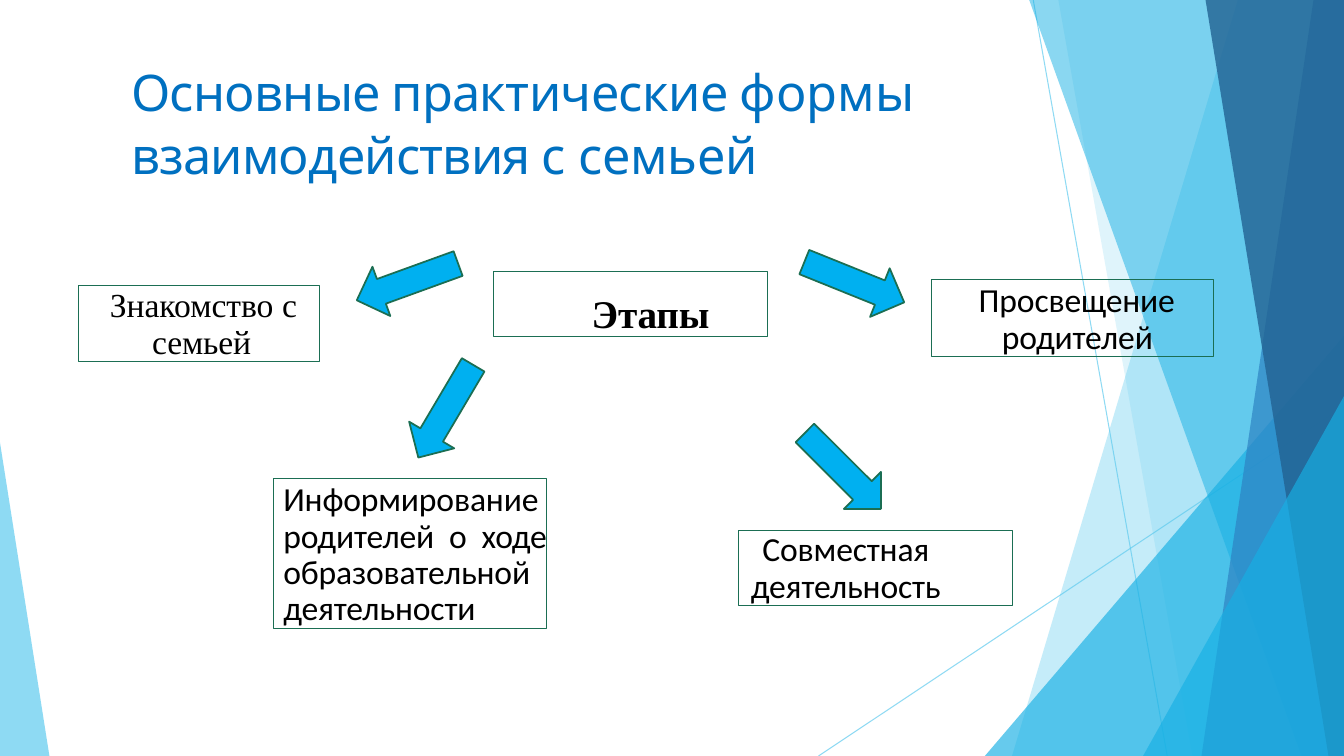
"""Build a slide on the practical forms of work with families."""
from dataclasses import dataclass
from math import hypot
from typing import Any, NamedTuple

from lxml.etree import SubElement
from pptx import Presentation
from pptx.dml.color import RGBColor
from pptx.enum.shapes import MSO_CONNECTOR, MSO_SHAPE
from pptx.enum.text import MSO_ANCHOR, MSO_AUTO_SIZE, PP_ALIGN
from pptx.oxml.ns import qn
from pptx.util import Inches, Pt

WIDE, HIGH = Inches(13.333), Inches(7.5)


@dataclass(frozen=True)
class Theme:
    """Colours, fonts and sizes of the slide."""
    sky: str = "5FCBEF"
    cyan: str = "17B0E4"
    blue: str = "2E83C3"
    navy: str = "226292"
    edge: str = "1B6E53"
    arrow: str = "00B0F0"
    head: str = "0070C0"
    ink: str = "000000"
    sans: str = "Calibri"
    serif: str = "Times New Roman"
    title: str = "Karla"
    body: float = 24
    core: float = 28
    large: float = 36
    thin: float = 0.75
    bold: float = 1.25


THEME = Theme()


class Point(NamedTuple):
    """A place in percent of the slide's width and height."""
    x: float
    y: float


class Area(NamedTuple):
    """A frame in percent of the slide's width and height."""
    x: float
    y: float
    w: float
    h: float


class Ray(NamedTuple):
    """A thin line across the slide."""
    start: Point
    end: Point


class Facet(NamedTuple):
    """A band from the top to the base, reaching the right edge."""
    top: float
    base: float
    hue: str
    alpha: int


class Wedge(NamedTuple):
    """A right triangle standing on the base."""
    area: Area
    apex: float
    hue: str
    alpha: int


class Arrow(NamedTuple):
    """A block arrow."""
    tail: Point
    tip: Point


@dataclass(frozen=True)
class Label:
    """A block of text: spans pair wording with letter spacing."""
    area: Area
    spans: tuple[tuple[str, float], ...]
    inset: float
    before: float
    left: float = 0.1
    first: float = 0
    right: float = 0
    line: Any = Pt(25.9)
    align: PP_ALIGN = PP_ALIGN.LEFT
    font: str = THEME.sans
    size: float = THEME.body
    hue: str = THEME.ink
    bold: bool = False


RAYS = (Ray(Point(76.88, 0), Point(86.85, 100)),
        Ray(Point(100, 53.73), Point(60.9, 100)))
DECOR = (
    Facet(92.1, 75.3, THEME.sky, 36),
    Facet(78.75, 88.73, THEME.sky, 20),
    Wedge(Area(73.28, 44.4, 26.72, 55.6), 1, THEME.cyan, 66),
    Facet(76.58, 96.83, THEME.cyan, 50),
    Facet(97.73, 89.4, THEME.blue, 70),
    Facet(89.7, 98.85, THEME.navy, 80),
    Wedge(Area(85.05, 52.4, 14.95, 47.6), 1, THEME.cyan, 66),
    Wedge(Area(0, 58.53, 3.68, 41.47), 0, THEME.sky, 70),
)
ARROWS = (
    Arrow(Point(34.09, 34.87), Point(26.55, 39.73)),
    Arrow(Point(35.21, 48.27), Point(31.13, 60.53)),
    Arrow(Point(59.85, 34.67), Point(67.28, 40)),
    Arrow(Point(59.89, 57.27), Point(65.55, 67.33)),
)
TITLE = Label(
    Area(9.68, 6, 60.15, 18.53),
    (("Основные практические ", -0.5), ("формы ", -0.1),
     ("взаимодействия ", -0.6), ("с ", 0), ("семьей", -0.1)),
    0.13, 9.2, left=0.01, line=Pt(44.9), font=THEME.title,
    size=THEME.large, hue=THEME.head)
LABELS = (
    Label(Area(36.75, 35.87, 20.33, 8.67), (("Этапы", -0.1),), 0.18, 12.8,
          left=0.97, line=None, font=THEME.serif, size=THEME.core, bold=True),
    Label(Area(5.85, 37.73, 17.93, 10.13),
          (("Знакомство ", 0), ("с ", -0.5), ("семьей", -0.1)), 0.03, 2.5,
          left=0.73, first=-0.42, font=THEME.serif),
    Label(Area(20.33, 63.33, 20.33, 19.87),
          (("Информирование родителей ", -0.1), ("о ", 0), ("ходе ", -0.2),
           ("образовательной деятельности", -0.1)), 0.04, 2.6,
          line=0.9, align=PP_ALIGN.JUSTIFY),
    Label(Area(69.3, 36.93, 21, 10.27), (("Просвещение родителей", -0.1),),
          0.04, 3, left=0.7, first=-0.23),
    Label(Area(54.98, 70.13, 20.33, 10), (("Совместная деятельность", -0.1),),
          0.02, 0.1, right=0.69, align=PP_ALIGN.CENTER),
)


def apply(item: Any, form: dict[str, Any]) -> None:
    """Set each format value on the item."""
    for name, value in form.items():
        setattr(item, name, value)


def spot(x: float, y: float) -> tuple[int, int]:
    """Turn shares of the slide into lengths."""
    return round(x * WIDE / 100), round(y * HIGH / 100)


def frame(area: Area) -> tuple[int, ...]:
    """Turn an area into left, top, width and height."""
    return spot(area.x, area.y) + spot(area.w, area.h)


def fade(owner: Any, alpha: int) -> None:
    """Make the colours of a shape partly clear."""
    for node in owner._element.spPr.iter(qn("a:srgbClr")):
        SubElement(node, qn("a:alpha")).set("val", str(alpha * 1000))


def paint(shape: Any, hue: str) -> None:
    """Give a shape a plain fill without shadow."""
    shape.shadow.inherit = False
    shape.fill.solid()
    shape.fill.fore_color.rgb = RGBColor.from_string(hue)


def trim(line: Any, hue: str, width: float) -> None:
    """Set the colour and width of a line."""
    line.color.rgb = RGBColor.from_string(hue)
    line.width = Pt(width)


def outline(shapes: Any, dots: list[tuple[int, int]]) -> Any:
    """Draw a closed outline through the dots."""
    pen = shapes.build_freeform(*dots[0], scale=1.0)
    pen.add_line_segments(dots[1:], close=True)
    return pen.convert_to_shape()


def draw_ray(shapes: Any, ray: Ray) -> None:
    """Draw one thin line."""
    link = shapes.add_connector(MSO_CONNECTOR.STRAIGHT, *spot(*ray.start), *spot(*ray.end))
    trim(link.line, THEME.sky, THEME.thin)
    SubElement(link._element.spPr, qn("a:effectLst"))
    fade(link, 70)


def draw_decor(shapes: Any, part: Facet | Wedge) -> None:
    """Draw one clear band or triangle."""
    if isinstance(part, Facet):
        shape = outline(shapes, [spot(part.top, 0), spot(100, 0),
                                 spot(100, 100), spot(part.base, 100)])
    else:
        shape = shapes.add_shape(MSO_SHAPE.ISOSCELES_TRIANGLE, *frame(part.area))
        shape.adjustments[0] = part.apex
    paint(shape, part.hue)
    shape.line.fill.background()
    fade(shape, part.alpha)


def draw_arrow(shapes: Any, arrow: Arrow) -> None:
    """Draw one block arrow along its axis."""
    (x, y), (tx, ty) = spot(*arrow.tail), spot(*arrow.tip)
    span = hypot(tx - x, ty - y)
    ux, uy = (tx - x) / span, (ty - y) / span
    half = Inches(0.13)
    neck = span - 2 * half
    sides = ((0, half), (neck, half), (neck, 2 * half), (span, 0),
             (neck, -2 * half), (neck, -half), (0, -half))
    shape = outline(shapes, [(round(x + a * ux - b * uy), round(y + a * uy + b * ux))
                             for a, b in sides])
    paint(shape, THEME.arrow)
    trim(shape.line, THEME.edge, THEME.bold)


def write(shape: Any, label: Label) -> None:
    """Fill a shape with the label's text."""
    text = shape.text_frame
    apply(text, dict(word_wrap=True, auto_size=MSO_AUTO_SIZE.NONE,
                     vertical_anchor=MSO_ANCHOR.TOP, margin_left=0, margin_right=0,
                     margin_top=Inches(label.inset), margin_bottom=0))
    para = text.paragraphs[0]
    apply(para, dict(alignment=label.align, line_spacing=label.line,
                     space_before=Pt(label.before)))
    props = para._p.get_or_add_pPr()
    for name, size in dict(marL=label.left, indent=label.first, marR=label.right).items():
        props.set(name, str(Inches(size)))
    for words, gap in label.spans:
        run = para.add_run()
        run.text = words
        apply(run.font, dict(name=label.font, size=Pt(label.size), bold=label.bold))
        run.font.color.rgb = RGBColor.from_string(label.hue)
        run._r.get_or_add_rPr().set("spc", str(round(gap * 100)))


def draw_label(shapes: Any, label: Label) -> None:
    """Draw one framed label."""
    shape = shapes.add_shape(MSO_SHAPE.RECTANGLE, *frame(label.area))
    shape.shadow.inherit = False
    shape.fill.background()
    trim(shape.line, THEME.edge, THEME.thin)
    write(shape, label)


def main() -> None:
    """Build and save the slide."""
    deck = Presentation()
    apply(deck, dict(slide_width=WIDE, slide_height=HIGH))
    shapes = deck.slides.add_slide(deck.slide_layouts[5]).shapes
    apply(shapes.title, dict(zip(("left", "top", "width", "height"), frame(TITLE.area))))
    write(shapes.title, TITLE)
    for draw, parts in ((draw_ray, RAYS), (draw_decor, DECOR),
                        (draw_arrow, ARROWS), (draw_label, LABELS)):
        for part in parts:
            draw(shapes, part)
    deck.save("out.pptx")


if __name__ == "__main__":
    main()
